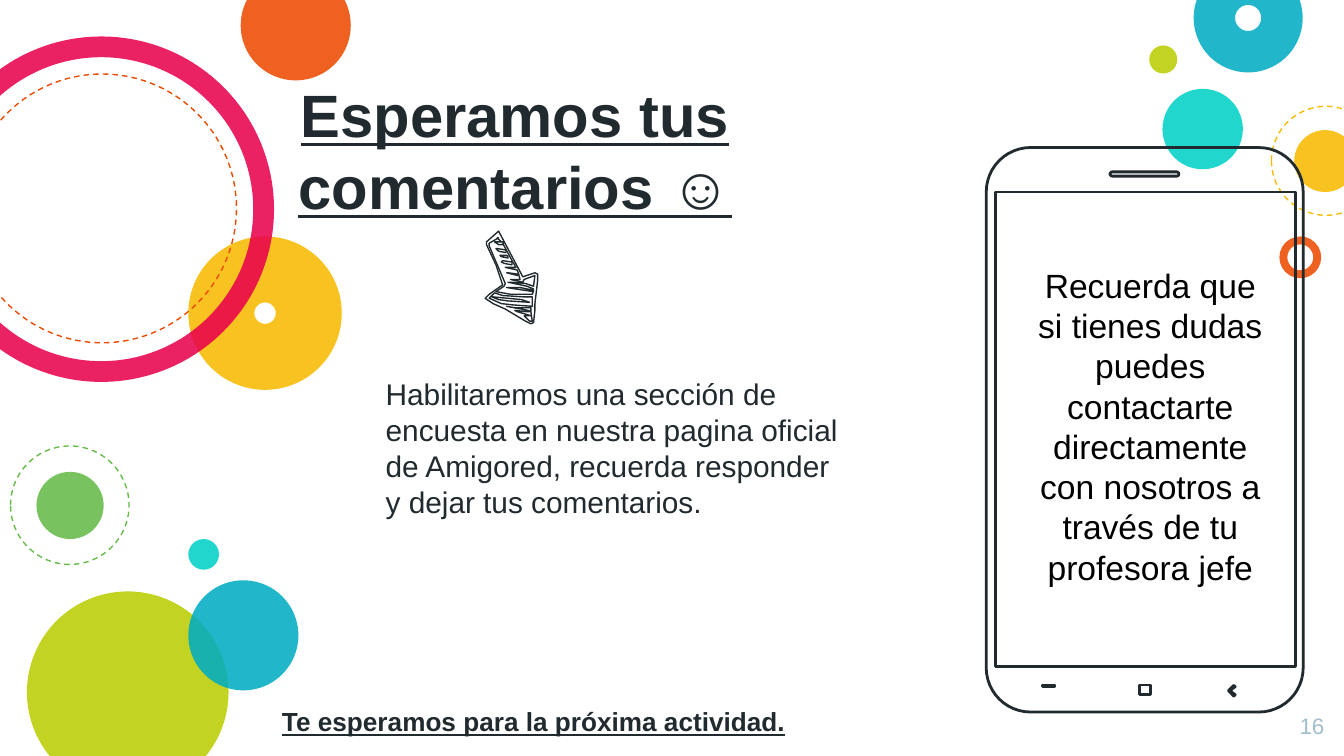
"""Build the closing slide with coloured circles, a phone outline and a sketched arrow."""
import lxml.etree
import pptx
import pptx.dml.color
import pptx.enum.dml
import pptx.enum.shapes
import pptx.enum.text
import pptx.oxml.ns
import pptx.util

Cm = pptx.util.Cm
Pt = pptx.util.Pt
RGBColor = pptx.dml.color.RGBColor
SHAPE = pptx.enum.shapes.MSO_SHAPE
ALIGN = pptx.enum.text.PP_ALIGN
ANCHOR = pptx.enum.text.MSO_ANCHOR

INK = RGBColor(0x21, 0x2A, 0x2E)
BLACK = RGBColor(0x00, 0x00, 0x00)
WHITE = RGBColor(0xFF, 0xFF, 0xFF)
TEAL = RGBColor(0x00, 0xD1, 0xC6)
LIME = RGBColor(0xBB, 0xCD, 0x00)
GREEN = RGBColor(0x65, 0xBB, 0x48)
YELLOW = RGBColor(0xF8, 0xBB, 0x00)
ORANGE = RGBColor(0xED, 0x4A, 0x00)
PINK = RGBColor(0xE8, 0x00, 0x4C)
BLUE = RGBColor(0x00, 0xAC, 0xC3)
GREY = RGBColor(0xA1, 0xBE, 0xCC)

prs = pptx.Presentation()
prs.slide_width = Cm(25.4)
prs.slide_height = Cm(14.29)
s = prs.slides.add_slide(prs.slide_layouts[6])


def add_text(text, box, size, color=INK, bold=False, underline=False,
             align=ALIGN.LEFT, anchor=ANCHOR.TOP, inset=(0, 0)):
    tf = s.shapes.add_textbox(*[Cm(v) for v in box]).text_frame
    tf.word_wrap = True
    tf.vertical_anchor = anchor
    tf.margin_left = tf.margin_right = Cm(inset[0])
    tf.margin_top = tf.margin_bottom = Cm(inset[1])
    p = tf.paragraphs[0]
    p.alignment = align
    r = p.add_run()
    r.text = text
    r.font.name = "Arial"
    r.font.size = Pt(size)
    r.font.bold = bold
    r.font.underline = underline
    r.font.color.rgb = color


def set_look(sp, fill=None, line=None, width=0.75):
    sp.shadow.inherit = False
    if fill is None:
        sp.fill.background()
    else:
        sp.fill.solid()
        sp.fill.fore_color.rgb = fill
    if line is None:
        sp.line.fill.background()
    else:
        sp.line.color.rgb = line
        sp.line.width = Pt(width)


circles = [
    ("disc", TEAL, 3.56, 10.19, 0.58, None),
    ("disc", LIME, 0.51, 11.18, 3.81, None),
    ("disc", GREEN, 0.69, 8.92, 1.27, None),
    ("dashed", GREEN, 0.2, 8.43, 2.24, None),
    ("ring", YELLOW, 3.56, 4.47, 2.9, 0.43),
    ("disc", ORANGE, 4.55, -0.56, 2.08, None),
    ("ring", PINK, -1.35, 0.69, 6.53, 0.06),
    ("dashed", ORANGE, -0.61, 1.4, 5.08, None),
    ("disc", BLUE, 3.56, 10.97, 2.08, None),
    ("disc", TEAL, 21.97, 1.68, 1.52, None),
    ("ring", ORANGE, 24.18, 4.47, 0.79, 0.19),
    ("disc", YELLOW, 24.46, 2.46, 1.17, None),
    ("ring", BLUE, 22.56, -0.69, 2.06, 0.38),
    ("disc", LIME, 21.72, 0.86, 0.53, None),
    ("dashed", YELLOW, 24.03, 2.01, 2.06, None),
]
for kind, color, x, y, d, thickness in circles:
    shape = SHAPE.DONUT if kind == "ring" else SHAPE.OVAL
    sp = s.shapes.add_shape(shape, Cm(x), Cm(y), Cm(d), Cm(d))
    if kind == "dashed":
        set_look(sp, line=color)
        sp.line.dash_style = pptx.enum.dml.MSO_LINE.DASH
        continue
    set_look(sp, fill=color)
    if kind == "ring":
        sp.adjustments[0] = thickness
    clr = sp.fill._xPr.find(".//" + pptx.oxml.ns.qn("a:srgbClr"))
    lxml.etree.SubElement(clr, pptx.oxml.ns.qn("a:alpha"), val="87000")

add_text("16", (23.98, 13.21, 1.3, 1.09), 12, color=GREY, align=ALIGN.RIGHT, inset=(0.25, 0.25))

phone_parts = [
    (SHAPE.ROUNDED_RECTANGLE, 18.64, 2.79, 5.99, 10.67, 0.14),
    (SHAPE.ROUNDED_RECTANGLE, 20.98, 3.25, 1.3, 0.08, 0.5),
    (SHAPE.RECTANGLE, 18.82, 3.63, 5.66, 8.97, None),
    (SHAPE.RECTANGLE, 19.71, 12.95, 0.23, 0.03, None),
    (SHAPE.RECTANGLE, 21.54, 12.95, 0.2, 0.18, None),
]
for shape, x, y, w, h, radius in phone_parts:
    sp = s.shapes.add_shape(shape, Cm(x), Cm(y), Cm(w), Cm(h))
    set_look(sp, line=INK, width=1.5)
    if radius:
        sp.adjustments[0] = radius

back_key = [(918, 510), (919, 511), (915, 514), (919, 517), (918, 518), (914, 514)]
arrow = [(398, 203), (389, 206), (380, 189), (371, 172), (362, 180), (362, 182), (369, 197),
         (374, 212), (364, 219), (361, 222), (367, 226), (376, 230), (391, 239), (395, 241),
         (397, 240), (398, 231), (398, 226), (400, 209), (400, 204)]
arrow_tip = [(395, 232), (396, 239), (394, 239), (390, 235), (395, 235), (385, 232), (383, 231),
             (392, 232), (395, 232), (393, 231), (377, 228), (383, 229), (395, 229)]
arrow_band = [(396, 228), (382, 227), (373, 226), (364, 222), (368, 218), (374, 220), (390, 221),
              (396, 221)]
arrow_shaft = [(397, 213), (391, 211), (380, 210), (378, 210), (392, 213), (397, 215), (397, 216),
               (387, 214), (377, 214), (390, 216), (397, 217), (396, 219), (380, 219), (369, 217),
               (375, 213), (376, 211), (364, 183), (364, 181), (371, 177), (370, 177), (374, 181),
               (381, 194), (384, 199), (376, 199), (385, 201), (387, 208), (380, 208), (389, 210),
               (390, 208), (398, 205)]
hatches = [
    [(380, 197), (381, 197), (381, 195), (374, 194), (373, 195), (375, 196)],
    [(376, 188), (377, 187), (376, 186), (370, 185), (369, 185), (371, 187)],
    [(385, 205), (386, 204), (385, 204), (378, 203), (377, 203)],
    [(378, 192), (378, 191), (377, 190), (372, 190), (373, 191)],
    [(369, 180), (368, 180), (371, 182), (374, 182), (375, 180)],
    [(388, 223), (367, 221), (366, 221), (371, 223), (378, 224), (394, 225)],
]
outlines = [(back_key, None, 1.5)]
outlines += [(points, WHITE, 0.75) for points in [arrow, arrow_tip, arrow_band, arrow_shaft] + hatches]
for points, fill, width in outlines:
    fb = s.shapes.build_freeform(*points[0], scale=Cm(2.54) / 100)
    fb.add_line_segments(points[1:], close=True)
    set_look(fb.convert_to_shape(), fill=fill, line=INK, width=width)

add_text("Recuerda que si tienes dudas puedes contactarte directamente con nosotros a través de tu "
         "profesora jefe", (19.48, 5, 4.52, 5.72), 18, color=BLACK, align=ALIGN.CENTER)
add_text("Esperamos tus comentarios ☺", (5.38, 1.42, 8.71, 2.77), 32, bold=True, underline=True,
         align=ALIGN.CENTER, anchor=ANCHOR.BOTTOM)
add_text("Habilitaremos una sección de encuesta en nuestra pagina oficial de Amigored, recuerda "
         "responder y dejar tus comentarios.", (7.04, 6.98, 9.25, 3), 16, inset=(0.25, 0.13))
add_text("Te esperamos para la próxima actividad.", (5.08, 13.21, 10.64, 0.86), 14, bold=True,
         underline=True, inset=(0.25, 0.13))

prs.save("out.pptx")
